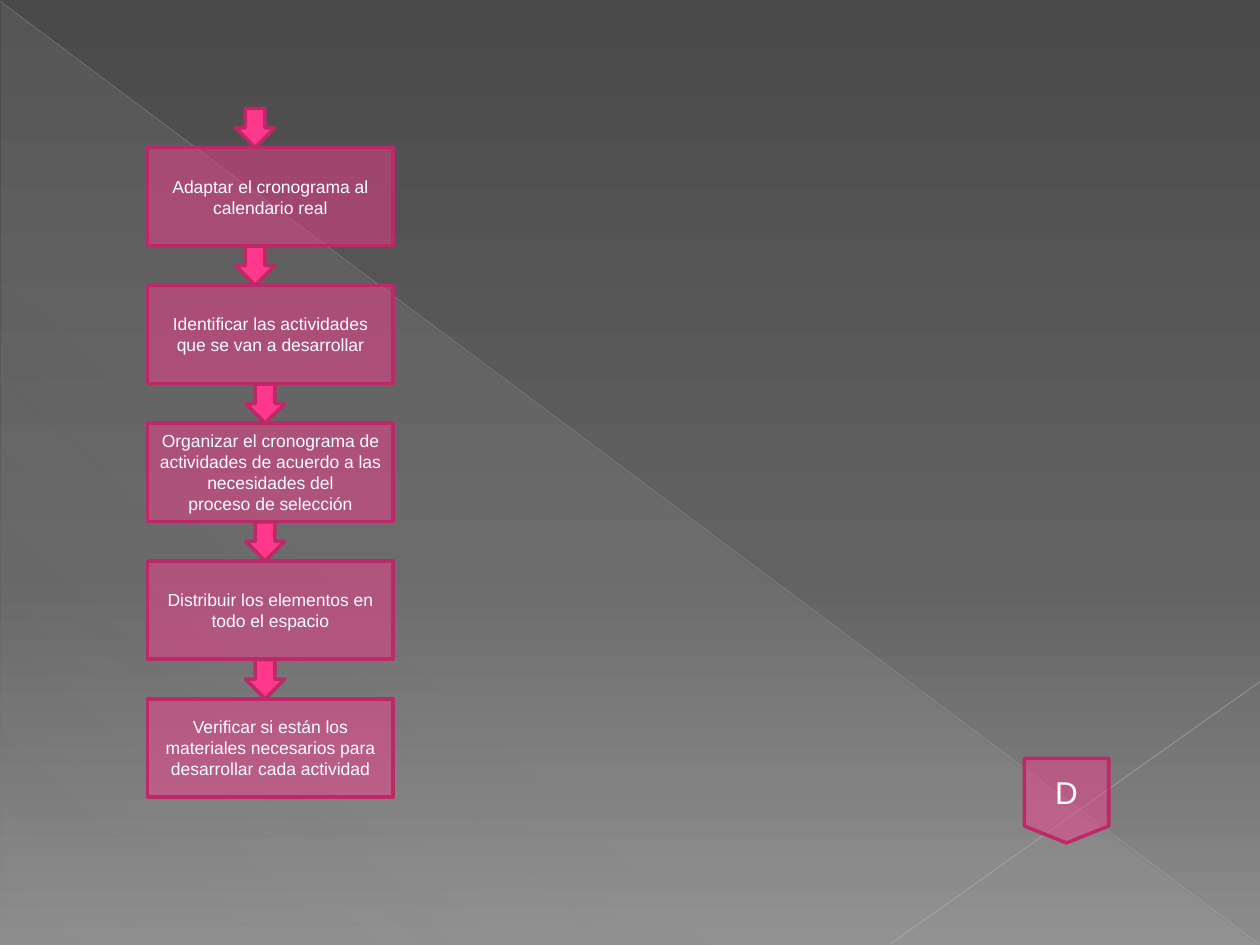
from lxml.etree import SubElement
from pptx import Presentation
from pptx.dml.color import RGBColor
from pptx.enum.shapes import MSO_CONNECTOR, MSO_SHAPE
from pptx.enum.text import MSO_ANCHOR, PP_ALIGN
from pptx.oxml.ns import qn
from pptx.util import Inches, Pt

COLORS = {"pink": "FF388C", "border": "BD2968", "text": "FFFFFF",
          "glow": "D2D2D2", "diagonal": "BFBFBF", "corner": "C6C6C6"}
BACKDROP = [(0, "4A4A4A", 100), (60, "626262", 100), (100, "8C8C8C", 100)]
SHEEN = [(0, COLORS["glow"], 10), (70, COLORS["glow"], 8), (100, COLORS["glow"], 1)]
RULES = [((0, 0.01), (9.99, 7.49), "diagonal", 0.39, 35),
         ((10, 5.41), (7.07, 7.49), "corner", 0.47, 45)]
STEPS = [
    (1.87, ["Adaptar el cronograma al calendario real"]),
    (1.87, ["Identificar las actividades que se van a desarrollar"]),
    (1.95, ["Organizar el cronograma de actividades de acuerdo a las necesidades del",
            "proceso de selección"]),
    (1.95, ["Distribuir los elementos en todo el espacio"]),
    (1.95, ["Verificar si están los materiales necesarios para desarrollar cada actividad"]),
]
STEP_LEFT, STEP_WIDTH, STEP_HEIGHT = 1.17, 1.95, 0.78
FLOW_TOP, ARROW_SIZE, PITCH = 0.86, 0.31, 1.094
PINK_OPACITY = 46


def set_opacity(color, percent):
    SubElement(color, qn("a:alpha")).set("val", str(percent * 1000))


def set_gradient(fill, owner, stops, angle):
    fill.gradient()
    gradient = next(owner.iter(qn("a:gradFill")))
    stop_list = gradient.find(qn("a:gsLst"))
    for stop in list(stop_list):
        stop_list.remove(stop)
    for position, color, opacity in stops:
        stop = SubElement(stop_list, qn("a:gs"), pos=str(position * 1000))
        set_opacity(SubElement(stop, qn("a:srgbClr"), val=color), opacity)
    gradient.find(qn("a:lin")).set("ang", str(angle * 60000))


def add_pink(slide, kind, left, top, width, height, lines=(), size=10, opacity=100):
    block = slide.shapes.add_shape(kind, Inches(left), Inches(top), Inches(width), Inches(height))
    block.shadow.inherit = False
    block.fill.solid()
    block.fill.fore_color.rgb = RGBColor.from_string(COLORS["pink"])
    set_opacity(next(block.element.spPr.iter(qn("a:srgbClr"))), opacity)
    block.line.color.rgb = RGBColor.from_string(COLORS["border"])
    block.line.width = Pt(2)
    frame = block.text_frame
    frame.word_wrap = True
    frame.vertical_anchor = MSO_ANCHOR.MIDDLE
    frame.margin_left = frame.margin_right = Inches(0.08)
    for index, line in enumerate(lines):
        paragraph = frame.add_paragraph() if index else frame.paragraphs[0]
        paragraph.text = line
        paragraph.alignment = PP_ALIGN.CENTER
        paragraph.font.name = "Arial"
        paragraph.font.size = Pt(size)
        paragraph.font.color.rgb = RGBColor.from_string(COLORS["text"])


def add_backdrop(slide):
    set_gradient(slide.background.fill, slide.element, BACKDROP, 90)
    sheen = slide.shapes.add_shape(MSO_SHAPE.RIGHT_TRIANGLE, Inches(0.01), Inches(0.02),
                                   Inches(9.98), Inches(7.48))
    sheen.shadow.inherit = False
    sheen.line.fill.background()
    set_gradient(sheen.fill, sheen.element.spPr, SHEEN, 133)
    for start, end, color, width, opacity in RULES:
        rule = slide.shapes.add_connector(MSO_CONNECTOR.STRAIGHT, *map(Inches, start + end))
        rule.line.color.rgb = RGBColor.from_string(COLORS[color])
        rule.line.width = Pt(width)
        set_opacity(next(rule.element.spPr.iter(qn("a:srgbClr"))), opacity)
        SubElement(rule.element.spPr, qn("a:effectLst"))


def main():
    """Build the schedule flowchart slide."""
    deck = Presentation()
    deck.slide_width, deck.slide_height = Inches(10), Inches(7.5)
    slide = deck.slides.add_slide(deck.slide_layouts[6])
    add_backdrop(slide)
    for index, (arrow_left, lines) in enumerate(STEPS):
        top = FLOW_TOP + index * PITCH
        add_pink(slide, MSO_SHAPE.DOWN_ARROW, arrow_left, top, ARROW_SIZE, ARROW_SIZE)
        add_pink(slide, MSO_SHAPE.FLOWCHART_PROCESS, STEP_LEFT, top + ARROW_SIZE,
                 STEP_WIDTH, STEP_HEIGHT, lines, opacity=PINK_OPACITY)
    add_pink(slide, MSO_SHAPE.FLOWCHART_OFFPAGE_CONNECTOR, 8.13, 6.02, 0.67, 0.67,
             ["D"], size=18, opacity=PINK_OPACITY)
    deck.save("out.pptx")


if __name__ == "__main__":
    main()
